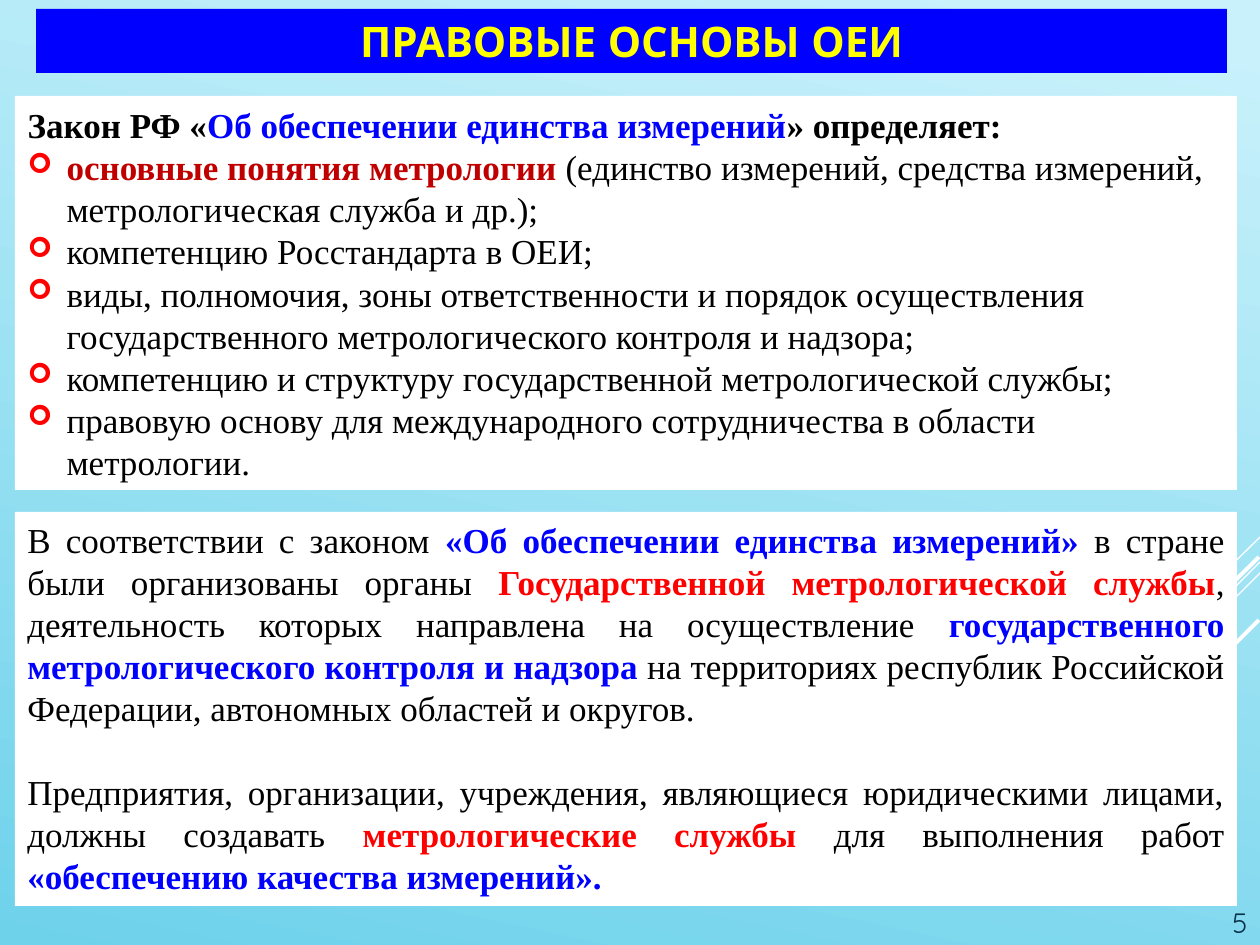
from dataclasses import dataclass
from typing import NamedTuple

from lxml import etree
from pptx import Presentation
from pptx.dml.color import RGBColor
from pptx.enum.shapes import MSO_CONNECTOR, MSO_SHAPE
from pptx.enum.text import MSO_ANCHOR, MSO_AUTO_SIZE, PP_ALIGN
from pptx.oxml.ns import qn
from pptx.util import Emu, Pt

STRAIGHT = MSO_CONNECTOR.STRAIGHT
RECTANGLE = MSO_SHAPE.RECTANGLE
TOP, MIDDLE, BOTTOM = MSO_ANCHOR.TOP, MSO_ANCHOR.MIDDLE, MSO_ANCHOR.BOTTOM
LEFT, CENTER, RIGHT, JUSTIFY = PP_ALIGN.LEFT, PP_ALIGN.CENTER, PP_ALIGN.RIGHT, PP_ALIGN.JUSTIFY
NO_AUTOFIT = MSO_AUTO_SIZE.NONE
PX_PER_INCH = 126


@dataclass(frozen=True)
class Theme:
    heading_font: str = "Quicksand"
    body_font: str = "Times New Roman"
    title_size: int = 24
    body_size: int = 20
    number_size: int = 16
    line_pitch: int = 24
    black: str = "000000"
    white: str = "FFFFFF"
    blue: str = "0000FF"
    red: str = "FF0000"
    dark_red: str = "C00000"
    yellow: str = "FFFF00"
    navy: str = "0A304A"
    sky_light: str = "C8F1FB"
    sky_deep: str = "6ED2EB"


THEME = Theme()


class Box(NamedTuple):
    left: int
    top: int
    width: int
    height: int


class Ray(NamedTuple):
    start: tuple[int, int]
    end: tuple[int, int]
    weight: float


class Span(NamedTuple):
    text: str
    color: str = THEME.black
    bold: bool = False


class Item(NamedTuple):
    spans: list[Span]
    bullet: bool = False
    align: PP_ALIGN = LEFT
    space_before: int = 0


TITLE_BOX = Box(36, 9, 1191, 64)
LAW_BOX = Box(15, 96, 1222, 394)
SERVICE_BOX = Box(15, 512, 1222, 394)
NUMBER_BOX = Box(1142, 853, 118, 92)
BULLET_INDENT = 39

RAYS = [
    Ray((1260, 537), (1155, 641), 0.75),
    Ray((1260, 562), (920, 903), 0.75),
    Ray((1260, 573), (1043, 790), 0.75),
    Ray((1259, 557), (1058, 755), 2.25),
    Ray((1259, 620), (1115, 764), 2.25),
]

LAW_ITEMS = [
    Item([
        Span("Закон РФ «", bold=True),
        Span("Об обеспечении единства измерений", THEME.blue, True),
        Span("» определяет:", bold=True),
    ]),
    Item([
        Span("основные понятия метрологии ", THEME.dark_red, True),
        Span("(единство измерений, средства измерений, метрологическая служба и др.);"),
    ], bullet=True),
    *(Item([Span(text)], bullet=True) for text in (
        "компетенцию Росстандарта в ОЕИ;",
        "виды, полномочия, зоны ответственности и порядок осуществления "
        "государственного метрологического контроля и надзора;",
        "компетенцию и структуру государственной метрологической службы;",
        "правовую основу для международного сотрудничества в области метрологии.",
    )),
]

SERVICE_ITEMS = [
    Item([
        Span("В соответствии с законом "),
        Span("«Об обеспечении единства измерений» ", THEME.blue, True),
        Span("в стране были организованы органы "),
        Span("Государственной метрологической службы", THEME.red, True),
        Span(", деятельность которых направлена на осуществление "),
        Span("государственного метрологического контроля и надзора", THEME.blue, True),
        Span(" на территориях республик Российской Федерации, автономных областей и округов."),
    ], align=JUSTIFY),
    Item([
        Span("Предприятия, организации, учреждения, являющиеся юридическими лицами, должны создавать "),
        Span("метрологические службы ", THEME.red, True),
        Span("для выполнения работ "),
        Span("«обеспечению качества измерений».", THEME.blue, True),
    ], align=JUSTIFY, space_before=THEME.line_pitch),
]


def px(value: int) -> Emu:
    return Emu(round(value * 914400 / PX_PER_INCH))


def rgb(value: str) -> RGBColor:
    return RGBColor.from_string(value)


def place(shape, box: Box) -> None:
    shape.left, shape.top, shape.width, shape.height = map(px, box)


def fill_plain(shape, color: str) -> None:
    shape.fill.solid()
    shape.fill.fore_color.rgb = rgb(color)
    shape.line.fill.background()


def format_font(font, name: str, size: int, color: str, bold: bool) -> None:
    font.name, font.size, font.bold = name, Pt(size), bold
    font.color.rgb = rgb(color)


def set_bullet(paragraph, shown: bool) -> None:
    """Give the paragraph a red arrow with a hanging indent, or no bullet at all."""
    properties = paragraph._p.get_or_add_pPr()
    indent = px(BULLET_INDENT) if shown else 0
    properties.set("marL", str(indent))
    properties.set("indent", str(-indent))
    if not shown:
        etree.SubElement(properties, qn("a:buNone"))
        return
    color = etree.SubElement(properties, qn("a:buClr"))
    etree.SubElement(color, qn("a:srgbClr"), val=THEME.red)
    etree.SubElement(properties, qn("a:buSzPct"), val="80000")
    etree.SubElement(properties, qn("a:buFont"), typeface="Wingdings")
    etree.SubElement(properties, qn("a:buChar"), char="➢")


def prepare_frame(shape, anchor: MSO_ANCHOR):
    frame = shape.text_frame
    frame.word_wrap = True
    frame.auto_size = NO_AUTOFIT
    frame.vertical_anchor = anchor
    return frame


def write_items(shape, items: list[Item], anchor: MSO_ANCHOR) -> None:
    frame = prepare_frame(shape, anchor)
    for index, item in enumerate(items):
        paragraph = frame.add_paragraph() if index else frame.paragraphs[0]
        paragraph.alignment = item.align
        paragraph.line_spacing = Pt(THEME.line_pitch)
        paragraph.space_before = Pt(item.space_before)
        set_bullet(paragraph, item.bullet)
        for span in item.spans:
            run = paragraph.add_run()
            run.text = span.text
            format_font(run.font, THEME.body_font, THEME.body_size, span.color, span.bold)


def write_label(shape, text: str, size: int, color: str, bold: bool,
                align: PP_ALIGN, anchor: MSO_ANCHOR) -> None:
    frame = prepare_frame(shape, anchor)
    frame.text = text
    paragraph = frame.paragraphs[0]
    paragraph.alignment = align
    format_font(paragraph.runs[0].font, THEME.heading_font, size, color, bold)


def draw_ray(slide, ray: Ray) -> None:
    line = slide.shapes.add_connector(STRAIGHT, *map(px, ray.start + ray.end))
    line.line.color.rgb = rgb(THEME.white)
    line.line.width = Pt(ray.weight)
    etree.SubElement(line.element.spPr, qn("a:effectLst"))


def paint_background(slide) -> None:
    fill = slide.background.fill
    fill.gradient()
    fill.gradient_angle = 258
    for stop, color, position in zip(fill.gradient_stops, (THEME.sky_light, THEME.sky_deep), (0.04, 1)):
        stop.color.rgb = rgb(color)
        stop.position = position


def main() -> None:
    presentation = Presentation()
    presentation.slide_width, presentation.slide_height = px(1260), px(945)
    slide = presentation.slides.add_slide(presentation.slide_layouts[1])
    title, body = slide.placeholders
    paint_background(slide)
    for ray in RAYS:
        draw_ray(slide, ray)

    number = slide.shapes.add_textbox(*map(px, NUMBER_BOX))
    write_label(number, "5", THEME.number_size, THEME.navy, False, RIGHT, BOTTOM)

    service = slide.shapes.add_shape(RECTANGLE, *map(px, SERVICE_BOX))
    service.shadow.inherit = False
    fill_plain(service, THEME.white)
    write_items(service, SERVICE_ITEMS, TOP)

    for placeholder, box, color in ((body, LAW_BOX, THEME.white), (title, TITLE_BOX, THEME.blue)):
        place(placeholder, box)
        fill_plain(placeholder, color)
        placeholder.element.getparent().append(placeholder.element)  # in front of the rays
    write_items(body, LAW_ITEMS, MIDDLE)
    write_label(title, "ПРАВОВЫЕ ОСНОВЫ ОЕИ", THEME.title_size, THEME.yellow, True, CENTER, MIDDLE)

    presentation.save("out.pptx")


if __name__ == "__main__":
    main()
